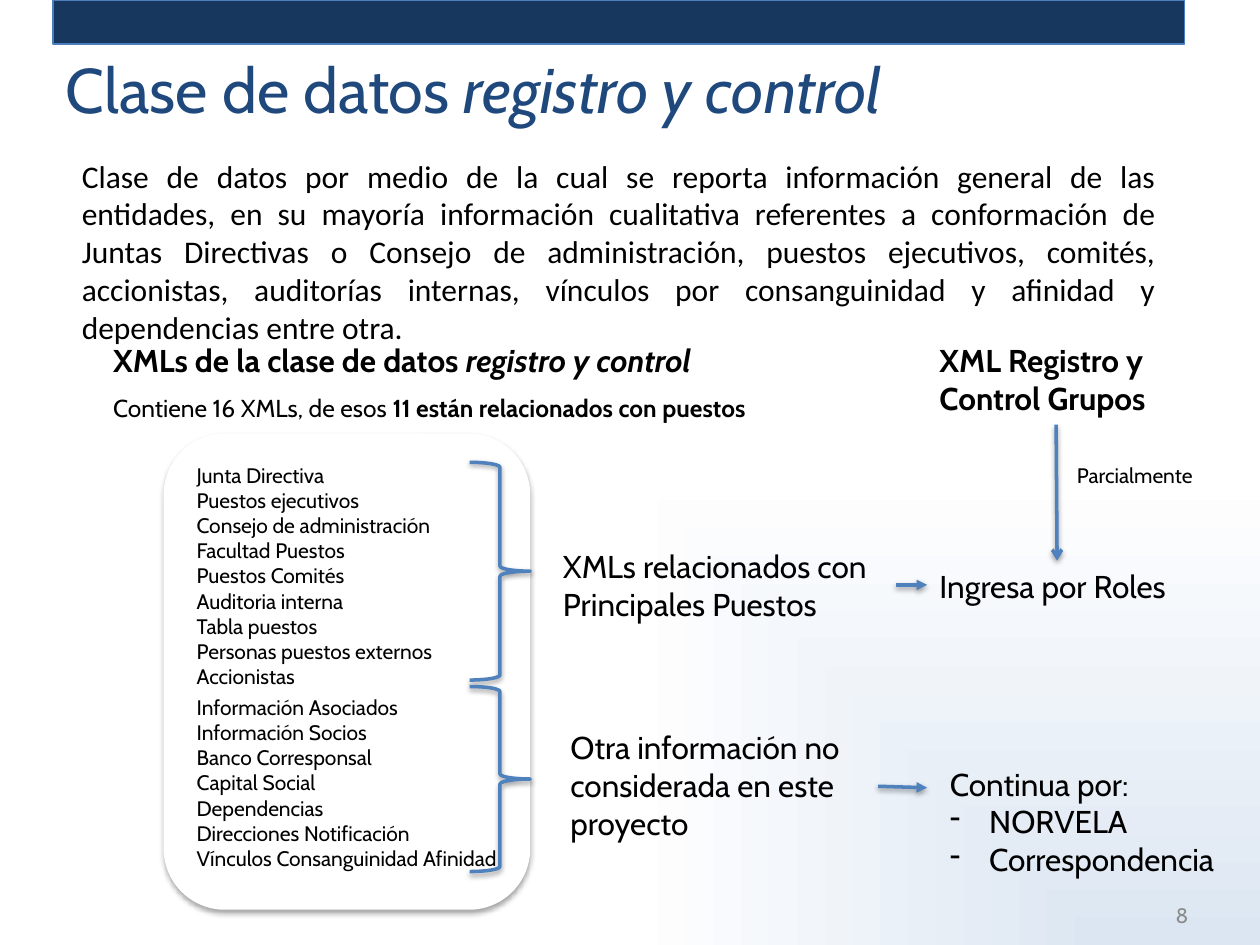
from dataclasses import dataclass

import lxml.etree
import pptx
import pptx.dml.color
import pptx.enum.shapes
import pptx.enum.text
import pptx.oxml.ns
import pptx.util

Cm = pptx.util.Cm
Pt = pptx.util.Pt
RGB = pptx.dml.color.RGBColor
Kind = pptx.enum.shapes.MSO_SHAPE
Align = pptx.enum.text.PP_ALIGN
Anchor = pptx.enum.text.MSO_ANCHOR
qn = pptx.oxml.ns.qn

NAVY = RGB(0x17, 0x37, 0x5E)
TITLE = RGB(0x1F, 0x49, 0x7D)
BLUE = RGB(0x4F, 0x81, 0xBD)
EDGE = RGB(0x4B, 0x7E, 0xBC)
PALE = RGB(0xDC, 0xE6, 0xF2)
GREY = RGB(0x8C, 0x8C, 0x8C)
WHITE = RGB(0xFF, 0xFF, 0xFF)
BLACK = RGB(0, 0, 0)

BOLD = {"bold": True}
SLANT = {"italic": True}


@dataclass
class Box:
    x: float
    y: float
    w: float
    h: float


@dataclass
class Note:
    box: Box
    lines: list
    size: int = 18
    wrap: bool = True
    color: RGB = BLACK
    font: str = "Cabin"
    align: Align = Align.LEFT
    anchor: Anchor = Anchor.TOP
    dash: bool = False


@dataclass
class Arrow:
    x1: float
    y1: float
    x2: float
    y2: float
    head: str = "triangle"


NOTES = [
    Note(Box(2.03, 6.76, 12.37, 1.02),
         [[("XMLs de la clase de datos ", BOLD), ("registro y control", BOLD | SLANT)]],
         wrap=False),
    Note(Box(2.03, 7.8, 22.2, 0.86),
         [[("Contiene 16 XMLs, de esos ", {}), ("11 están relacionados con puestos", BOLD)]],
         size=14),
    Note(Box(18.69, 6.76, 5.21, 1.8), [[("XML Registro y Control Grupos", BOLD)]]),
    Note(Box(11.1, 10.9, 6.96, 1.8), ["XMLs relacionados con Principales Puestos"]),
    Note(Box(11.25, 14.55, 6.45, 2.57), ["Otra información no considerada en este proyecto"]),
    Note(Box(18.69, 11.3, 5.21, 1.02), ["Ingresa por Roles"], wrap=False),
    Note(Box(18.9, 15.29, 6.25, 2.57), ["Continua por:", "NORVELA", "Correspondencia"],
         dash=True),
    Note(Box(21.46, 9.19, 2.9, 0.76), ["Parcialmente"], size=12, wrap=False),
    Note(Box(18.29, 17.93, 5.92, 1.02), ["8"], size=12, color=GREY,
         align=Align.RIGHT, anchor=Anchor.MIDDLE),
]

HEAD = Note(Box(1.07, 0.74, 22.81, 2.08),
            [[("Clase de datos ", {}), ("registro y control", SLANT)]],
            size=36, color=TITLE, anchor=Anchor.MIDDLE)

LISTS = [
    Note(Box(3.71, 9.19, 5.38, 4.88),
         ["Junta Directiva", "Puestos ejecutivos", "Consejo de administración",
          "Facultad Puestos", "Puestos Comités", "Auditoria interna", "Tabla puestos",
          "Personas puestos externos", "Accionistas"], size=12, wrap=False),
    Note(Box(3.71, 13.87, 6.63, 3.84),
         ["Información Asociados", "Información Socios", "Banco Corresponsal",
          "Capital Social", "Dependencias", "Direcciones Notificación",
          "Vínculos Consanguinidad Afinidad"], size=12, wrap=False),
]

CARD = Note(Box(1.4, 2.01, 22.15, 5.11),
            ["Clase de datos por medio de la cual se reporta información general de las "
             "entidades, en su mayoría información cualitativa referentes a conformación de "
             "Juntas Directivas o Consejo de administración, puestos ejecutivos, comités, "
             "accionistas, auditorías internas, vínculos por consanguinidad y afinidad y "
             "dependencias entre otra."],
            font="Calibri", align=Align.JUSTIFY)

BRACES = [Box(9.47, 9.32, 1.22, 4.39), Box(9.47, 13.84, 1.22, 3.73)]

ARROWS = [
    Arrow(18.06, 11.79, 18.69, 11.79),
    Arrow(17.7, 15.85, 18.69, 15.88),
    Arrow(21.29, 8.56, 21.31, 11.3, "arrow"),
]


def put(obj, **form) -> None:
    for key, val in form.items():
        setattr(obj, key, val)


def node(root, tag: str, **attrs):
    return lxml.etree.SubElement(root, qn(tag), attrs)


def span(box: Box) -> list:
    return [Cm(v) for v in (box.x, box.y, box.w, box.h)]


def write(shape, note: Note) -> None:
    frame = shape.text_frame
    put(frame, word_wrap=note.wrap, vertical_anchor=note.anchor,
        auto_size=pptx.enum.text.MSO_AUTO_SIZE.NONE)
    for i, line in enumerate(note.lines):
        para = frame.add_paragraph() if i else frame.paragraphs[0]
        put(para, alignment=note.align, space_before=Pt(0))
        mark = note.dash and i > 0
        props = para._p.get_or_add_pPr()
        props.set("marL", str(Cm(0.79) if mark else 0))
        props.set("indent", str(-Cm(0.79) if mark else 0))
        if mark:
            node(props, "a:buChar", char="-")
        else:
            node(props, "a:buNone")
        for text, form in [(line, {})] if isinstance(line, str) else line:
            run = para.add_run()
            run.text = text
            put(run.font, name=note.font, size=Pt(note.size), **form)
            run.font.color.rgb = note.color


def fit(shape, note: Note) -> None:
    put(shape, **dict(zip(("left", "top", "width", "height"), span(note.box))))
    write(shape, note)


def draw(slide, kind: Kind, box: Box, fill=None, edge=None, width: float = 2):
    shape = slide.shapes.add_shape(kind, *span(box))
    shape.shadow.inherit = False
    for part, color in ((shape.fill, fill), (shape.line.fill, edge)):
        if color is None:
            part.background()
        else:
            part.solid()
            part.fore_color.rgb = color
    if edge is not None:
        shape.line.width = Pt(width)
    return shape


def shade(shape, alpha: int, dist: float) -> None:
    props = shape._element.spPr
    group = props.find(qn("a:effectLst"))
    if group is None:
        group = node(props, "a:effectLst")
    cast = node(group, "a:outerShdw", blurRad=str(Pt(3.1)), dist=str(Pt(dist)),
                dir="5400000", rotWithShape="0")
    tone = node(cast, "a:srgbClr", val=str(BLACK))
    node(tone, "a:alpha", val=str(alpha * 1000))


def link(slide, arrow: Arrow) -> None:
    ends = [Cm(v) for v in (arrow.x1, arrow.y1, arrow.x2, arrow.y2)]
    line = slide.shapes.add_connector(pptx.enum.shapes.MSO_CONNECTOR.STRAIGHT, *ends)
    line.line.color.rgb = BLUE
    line.line.width = Pt(2)
    node(line._element.spPr.find(qn("a:ln")), "a:tailEnd", type=arrow.head)
    shade(line, 38, 1.6)


def tint(slide) -> None:
    fill = slide.background.fill
    fill.gradient()
    for stop, color, pos in zip(fill.gradient_stops, (PALE, WHITE), (0, 1)):
        stop.color.rgb = color
        stop.position = pos
    grad = slide._element.cSld.find(".//" + qn("a:gradFill"))
    line = grad.find(qn("a:lin"))
    shape = lxml.etree.Element(qn("a:path"), {"path": "rect"})
    node(shape, "a:fillToRect", l="100000", t="100000")
    grad.replace(line, shape)


def main() -> None:
    deck = pptx.Presentation()
    put(deck, slide_width=Cm(25.4), slide_height=Cm(19.05))
    slide = deck.slides.add_slide(deck.slide_layouts[3])
    tint(slide)
    bar = draw(slide, Kind.RECTANGLE, Box(1.07, 0, 22.81, 0.89), NAVY, EDGE, 0.75)
    panel = draw(slide, Kind.ROUNDED_RECTANGLE, Box(3.3, 8.74, 7.39, 9.6), WHITE)
    shade(panel, 35, 1.8)
    for back in (panel, bar):
        slide.shapes._spTree.insert(2, back._element)
    for shape, note in zip(slide.placeholders, [HEAD, *LISTS]):
        fit(shape, note)
    write(draw(slide, Kind.FLOWCHART_CARD, CARD.box), CARD)
    for box in BRACES:
        shade(draw(slide, Kind.RIGHT_BRACE, box, edge=BLUE), 38, 1.6)
    for note in NOTES:
        write(slide.shapes.add_textbox(*span(note.box)), note)
    for arrow in ARROWS:
        link(slide, arrow)
    deck.save("out.pptx")


if __name__ == "__main__":
    main()
